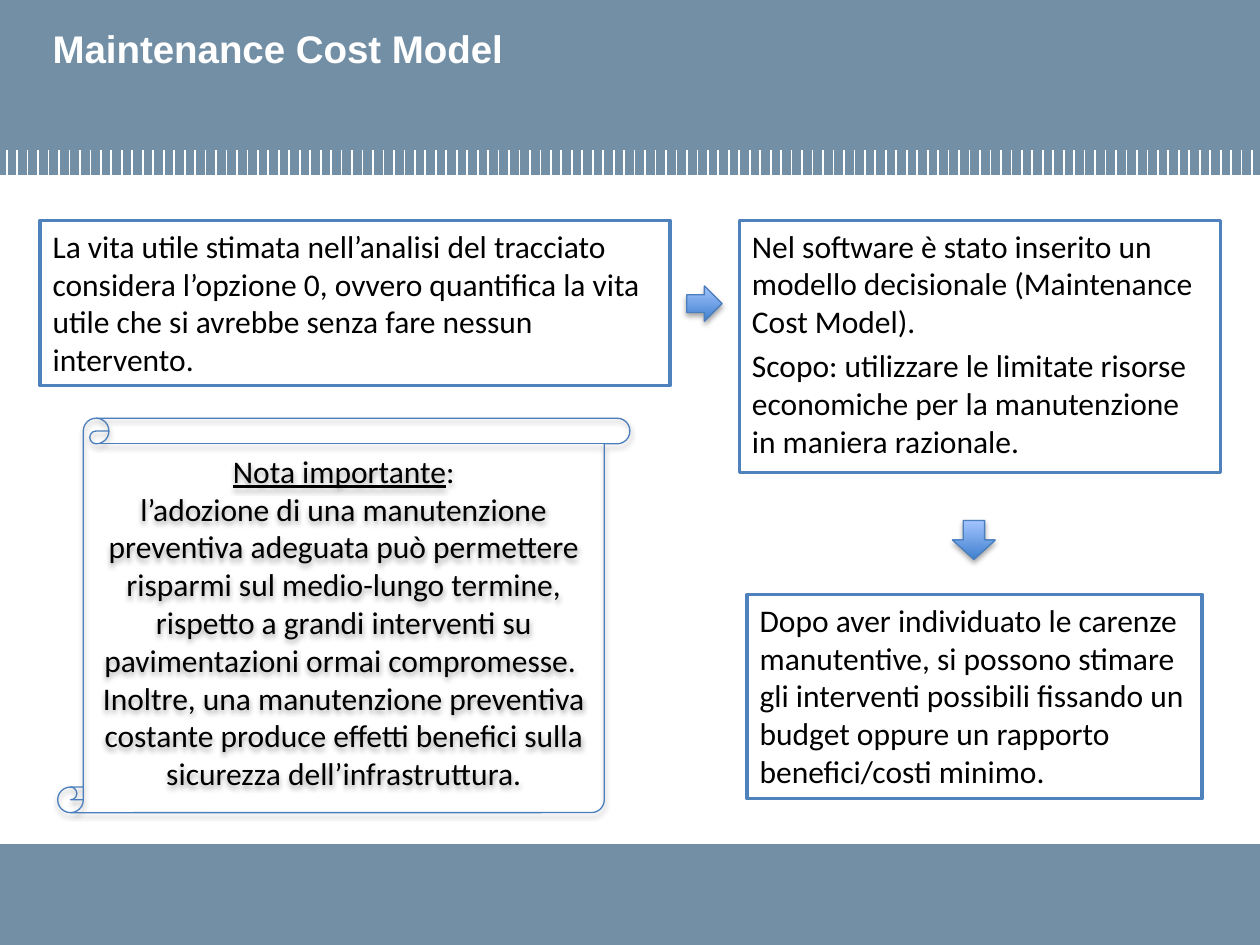
"""Build the Maintenance Cost Model slide."""
from dataclasses import dataclass

import lxml.etree
import pptx
import pptx.dml.color
import pptx.enum.shapes
import pptx.enum.text
import pptx.oxml.ns
import pptx.util

Pt = pptx.util.Pt
RGB = pptx.dml.color.RGBColor.from_string
SHAPE = pptx.enum.shapes.MSO_SHAPE
ALIGN = pptx.enum.text.PP_ALIGN
ANCHOR = pptx.enum.text.MSO_ANCHOR
AUTO = pptx.enum.text.MSO_AUTO_SIZE
qn = pptx.oxml.ns.qn


@dataclass(frozen=True)
class Theme:
    band: str = "728FA5"
    white: str = "FFFFFF"
    text: str = "000000"
    border: str = "4F81BD"
    outline: str = "4B7EBC"
    grad: tuple = ("3F80CE", "A4C4FF")
    title_font: str = "Arial"
    body_font: str = "Calibri"
    title_size: int = 22
    body_size: int = 18


T = Theme()


def add_shape(s, kind, box, fill=None, line=None, width=0.75):
    sp = s.shapes.add_shape(kind, *map(Pt, box))
    sp.shadow.inherit = False
    if fill:
        sp.fill.solid()
        sp.fill.fore_color.rgb = RGB(fill)
    else:
        sp.fill.background()
    if line:
        sp.line.color.rgb = RGB(line)
        sp.line.width = Pt(width)
    else:
        sp.line.fill.background()
    return sp


def add_shadow(sp):
    effects = sp._element.spPr.find(qn("a:effectLst"))
    shadow = lxml.etree.SubElement(
        effects, qn("a:outerShdw"), blurRad=str(Pt(3.1)), dist=str(Pt(1.8)),
        dir="5400000", rotWithShape="0")
    color = lxml.etree.SubElement(shadow, qn("a:srgbClr"), val="000000")
    lxml.etree.SubElement(color, qn("a:alpha"), val="35000")


def set_text(tf, text, font, size, color, align=ALIGN.LEFT, bold=False):
    tf.word_wrap = True
    tf.text = text
    for p in tf.paragraphs:
        p.alignment = align
        for r in p.runs:
            r.font.name = font
            r.font.size = Pt(size)
            r.font.bold = bold
            r.font.color.rgb = RGB(color)


def add_title(s, box, text):
    tf = s.shapes.add_textbox(*map(Pt, box)).text_frame
    set_text(tf, text, T.title_font, T.title_size, T.white, bold=True)


def add_ticks(s, count, left, step, top, bottom):
    group = s.shapes.add_group_shape()
    for i in range(count):
        x = Pt(left + i * step)
        line = group.shapes.add_connector(
            pptx.enum.shapes.MSO_CONNECTOR.STRAIGHT, x, Pt(top), x, Pt(bottom))
        line.line.color.rgb = RGB(T.white)
        line.line.width = Pt(1)
        lxml.etree.SubElement(line._element.spPr, qn("a:effectLst"))


def add_box(s, box, text, grow=True):
    sp = add_shape(s, SHAPE.RECTANGLE, box, T.white, T.border, 2)
    tf = sp.text_frame
    set_text(tf, text, T.body_font, T.body_size, T.text)
    tf.vertical_anchor = ANCHOR.TOP
    tf.auto_size = AUTO.SHAPE_TO_FIT_TEXT if grow else AUTO.NONE
    for p in tf.paragraphs[1:]:
        p.space_before = Pt(3.6)


def add_scroll(s, box, heading, text):
    sp = add_shape(s, SHAPE.VERTICAL_SCROLL, box, line=T.outline)
    sp.adjustments[0] = 0.065
    add_shadow(sp)
    tf = sp.text_frame
    set_text(tf, f"{heading}\n{text}", T.body_font, T.body_size, T.text, ALIGN.CENTER)
    tf.vertical_anchor = ANCHOR.MIDDLE
    p = tf.paragraphs[0]
    p.runs[0].font.underline = True
    r = p.add_run()
    r.text = ":"
    r.font.name = T.body_font
    r.font.size = Pt(T.body_size)
    r.font.color.rgb = RGB(T.text)


def add_arrow(s, kind, box):
    sp = add_shape(s, kind, box, line=T.outline)
    sp.fill.gradient()
    sp.fill.gradient_angle = 90
    for stop, color in zip(sp.fill.gradient_stops, T.grad):
        stop.color.rgb = RGB(color)
    add_shadow(sp)


def main():
    prs = pptx.Presentation()
    prs.slide_width, prs.slide_height = Pt(720), Pt(540)
    s = prs.slides.add_slide(prs.slide_layouts[6])

    add_shape(s, SHAPE.RECTANGLE, (0, 0, 720, 100), T.band)
    add_shape(s, SHAPE.RECTANGLE, (0, 482.4, 720, 57.6), T.band)
    add_ticks(s, 120, 3.85, 5.98, 85.7, 100)
    add_title(s, (23, 10.8, 675.4, 66.2), "Maintenance Cost Model")

    add_box(s, (422.6, 126, 275, 144),
            "Nel software è stato inserito un modello decisionale "
            "(Maintenance Cost Model).\n"
            "Scopo: utilizzare le limitate risorse economiche per la "
            "manutenzione in maniera razionale.", grow=False)
    add_box(s, (23, 126, 360, 94.3),
            "La vita utile stimata nell’analisi del tracciato considera "
            "l’opzione 0, ovvero quantifica la vita utile che si avrebbe "
            "senza fare nessun intervento.")
    add_box(s, (427, 339.8, 260, 116.6),
            "Dopo aver individuato le carenze manutentive, si possono "
            "stimare gli interventi possibili fissando un budget oppure "
            "un rapporto benefici/costi minimo.")
    add_scroll(s, (33, 239, 327, 225.4), "Nota importante",
               "l’adozione di una manutenzione preventiva adeguata può "
               "permettere risparmi sul medio-lungo termine, rispetto a "
               "grandi interventi su pavimentazioni ormai compromesse. \n"
               "Inoltre, una manutenzione preventiva costante produce "
               "effetti benefici sulla sicurezza dell’infrastruttura.")
    add_arrow(s, SHAPE.RIGHT_ARROW, (392.4, 163.4, 20.2, 20.2))
    add_arrow(s, SHAPE.DOWN_ARROW, (544.3, 297.4, 24.5, 22.3))

    prs.save("out.pptx")


if __name__ == "__main__":
    main()
